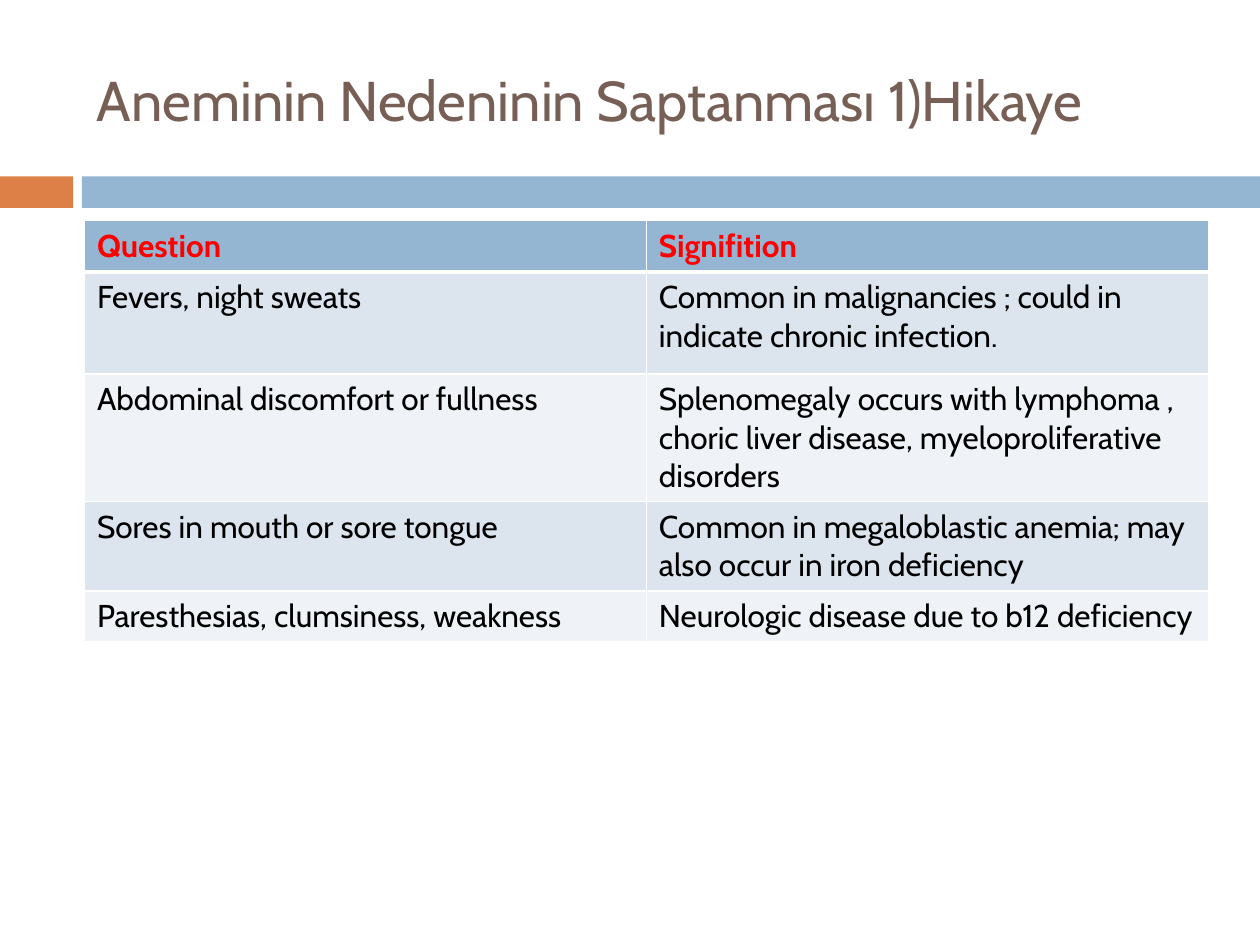
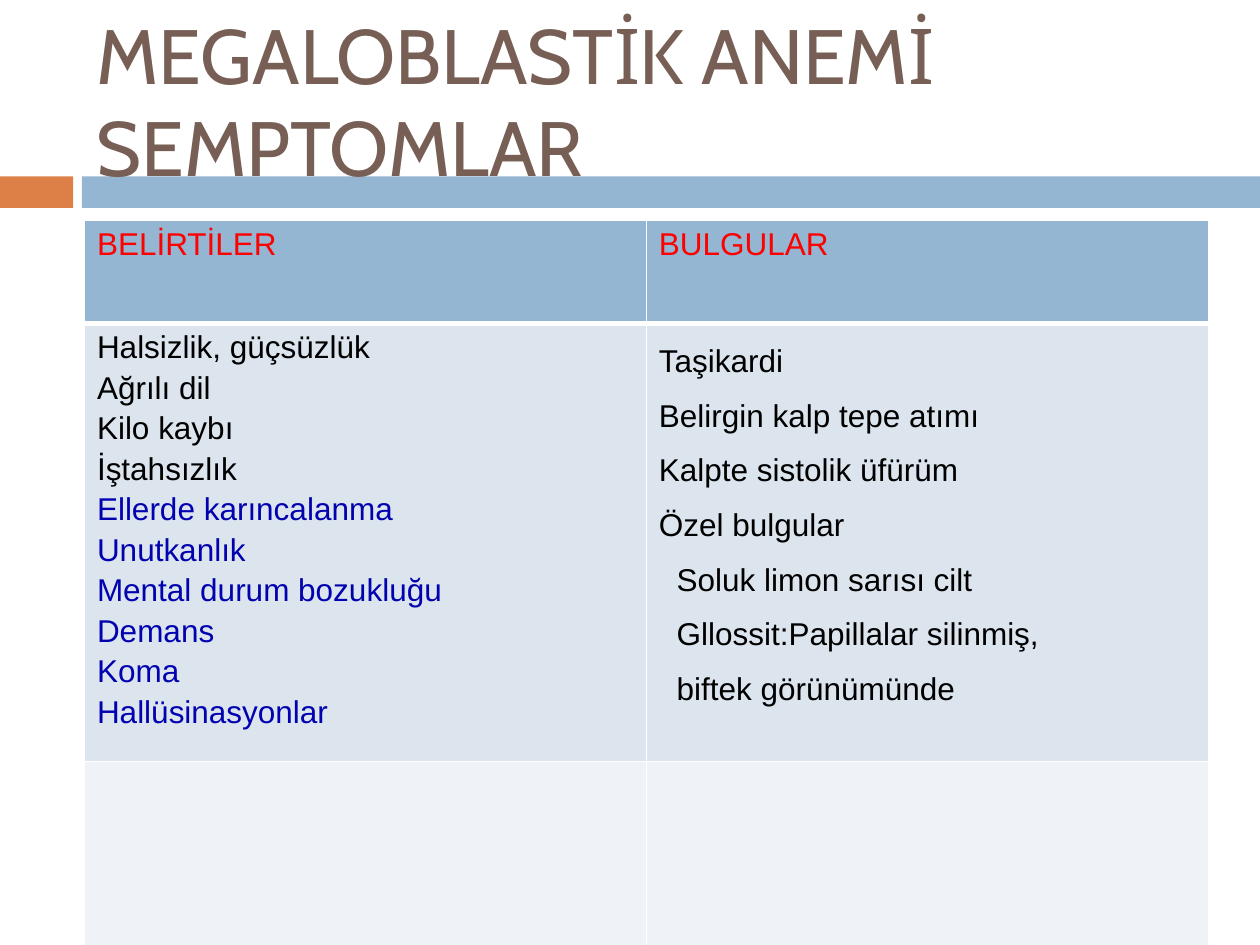
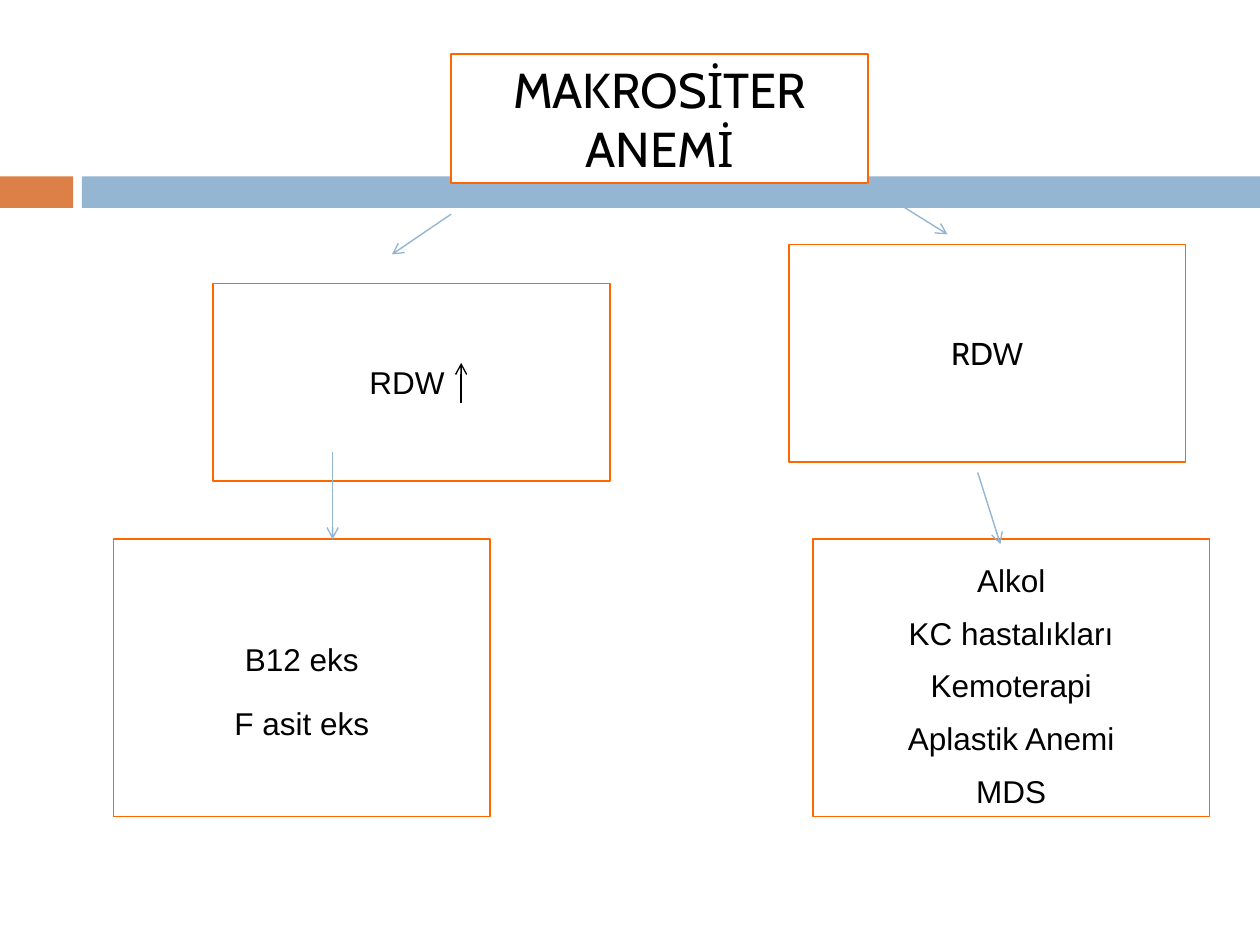
"""Build three slides on anaemia: two tables and a decision chart."""
import dataclasses

import pptx
import pptx.dml.color
import pptx.enum.shapes
import pptx.enum.text
import pptx.oxml
import pptx.oxml.ns
import pptx.util

COLS, ROWS = 100, 75
UNIT = pptx.util.Inches(0.1)
NS = pptx.oxml.ns.nsdecls("a")
ALIGN = pptx.enum.text.PP_ALIGN
MIDDLE = pptx.enum.text.MSO_ANCHOR.MIDDLE
RECT = pptx.enum.shapes.MSO_SHAPE.RECTANGLE
STRAIGHT = pptx.enum.shapes.MSO_CONNECTOR.STRAIGHT


@dataclasses.dataclass(frozen=True)
class Theme:
    """Colours, fonts and type sizes of the deck."""
    white: str = "FFFFFF"
    ink: str = "000000"
    brown: str = "775F55"
    blue: str = "94B6D2"
    rust: str = "DD8047"
    red: str = "FF0000"
    navy: str = "0101AF"
    edge: str = "FF6600"
    bands: tuple = ("DCE5EE", "EFF3F7")
    main: str = "Cabin"
    plain: str = "Arial"
    body: int = 18
    node: int = 28
    head: int = 32
    large: int = 44
    thin: float = 0.79
    rule: int = 1
    thick: int = 3


LOOK = Theme()


@dataclasses.dataclass(frozen=True)
class Box:
    """An area measured in grid columns and rows."""
    x: float
    y: float
    w: float
    h: float

    def sub(self, x, y, w, h):
        """Give a box placed relative to this one."""
        return Box(self.x + x, self.y + y, w, h)

    def spot(self, x, y):
        """Give the slide position of a point in this box."""
        return round((self.x + x) * UNIT), round((self.y + y) * UNIT)

    def area(self):
        """Give left, top, width and height in slide units."""
        return tuple(round(n * UNIT) for n in (self.x, self.y, self.w, self.h))


PAGE = Box(0, 0, COLS, ROWS)
TITLE = PAGE.sub(6.7, 2.5, 89.2, 10.8)
BODY = PAGE.sub(6.7, 17.5, 89.2, 57.5)


def rgb(code):
    """Turn a hex code into a colour."""
    return pptx.dml.color.RGBColor.from_string(code)


def write(frame, lines, size=LOOK.body, font=LOOK.main, color=LOOK.ink,
          bold=False, align=ALIGN.LEFT, lead=None, gap=None, inset=0):
    """Write lines of text; a line may be a pair of text and own format."""
    frame.word_wrap = True
    for i, line in enumerate(lines):
        text, own = line if isinstance(line, tuple) else (line, {})
        para = frame.paragraphs[0] if i == 0 else frame.add_paragraph()
        para.alignment = align
        para.line_spacing = lead
        if gap is not None:
            para.space_before = pptx.util.Pt(gap)
        indent = own.get("inset", inset)
        if indent:
            para._p.get_or_add_pPr().set("marL", str(round(indent * UNIT)))
        run = para.add_run()
        run.text = text
        run.font.name = font
        run.font.size = pptx.util.Pt(size)
        run.font.bold = bold
        run.font.color.rgb = rgb(own.get("color", color))


def block(slide, box, fill, edge=None):
    """Draw a flat rectangle."""
    shape = slide.shapes.add_shape(RECT, *box.area())
    shape.shadow.inherit = False
    shape.fill.solid()
    shape.fill.fore_color.rgb = rgb(fill)
    if edge:
        shape.line.color.rgb = rgb(edge)
        shape.line.width = pptx.util.Pt(LOOK.rule)
    else:
        shape.line.fill.background()
    return shape


def bands(slide, box):
    """Draw the rust and blue bands across the slide."""
    block(slide, box.sub(0, 14, 5.8, 2.5), LOOK.rust)
    block(slide, box.sub(6.5, 14, box.w - 6.5, 2.5), LOOK.blue)


def title(slide, box, text, size):
    """Write the slide title."""
    frame = slide.shapes.add_textbox(*box.area()).text_frame
    frame.vertical_anchor = MIDDLE
    write(frame, [text], size=size, color=LOOK.brown)


def border(cell, **widths):
    """Draw white cell borders, given in points by side."""
    props = cell._tc.get_or_add_tcPr()
    for i, side in enumerate("LRTB"):
        width = pptx.util.Pt(widths.get(side, LOOK.rule))
        props.insert(i, pptx.oxml.parse_xml(
            f'<a:ln{side} {NS} w="{width}"><a:solidFill>'
            f'<a:srgbClr val="{LOOK.white}"/></a:solidFill></a:ln{side}>'))


def grid(slide, box, rows, sizes, head, body):
    """Draw a banded table; head and body hold one format per column."""
    count = len(rows[0])
    area = Box(box.x, box.y, box.w, sum(sizes)).area()
    table = slide.shapes.add_table(len(rows), count, *area).table
    table.first_row = table.horz_banding = False
    for col in table.columns:
        col.width = round(box.w / count * UNIT)
    for r, (row, size) in enumerate(zip(rows, sizes)):
        table.rows[r].height = round(size * UNIT)
        for c, lines in enumerate(row):
            cell = table.cell(r, c)
            cell.fill.solid()
            cell.fill.fore_color.rgb = rgb(
                LOOK.bands[(r - 1) % 2] if r else LOOK.blue)
            border(cell, **({0: {"B": LOOK.thick}, 1: {"T": LOOK.thick}}.get(r, {})))
            write(cell.text_frame, lines, **(body if r else head)[c])


def arrow(slide, box, start, end, color=LOOK.blue):
    """Draw a thin arrow between two points of a box."""
    line = slide.shapes.add_connector(STRAIGHT, *box.spot(*start), *box.spot(*end))
    line.line.color.rgb = rgb(color)
    line.line.width = pptx.util.Pt(LOOK.thin)
    line.line._get_or_add_ln().append(
        pptx.oxml.parse_xml(f'<a:tailEnd {NS} type="arrow"/>'))
    line._element.spPr.append(pptx.oxml.parse_xml(f"<a:effectLst {NS}/>"))


def node(slide, box, lines, **style):
    """Draw a framed box with centred text."""
    frame = block(slide, box, LOOK.white, LOOK.edge).text_frame
    frame.vertical_anchor = MIDDLE
    write(frame, lines, align=ALIGN.CENTER, **style)


def history(slide, box):
    """Fill the table of history questions."""
    rows = [
        ("Question", "Signifition"),
        ("Fevers, night sweats",
         "Common in malignancies ; could in indicate chronic infection."),
        ("Abdominal discomfort or fullness",
         "Splenomegaly occurs with lymphoma , choric liver disease, "
         "myeloproliferative disorders"),
        ("Sores in mouth or sore tongue",
         "Common in megaloblastic anemia; may also occur in iron deficiency"),
        ("Paresthesias, clumsiness, weakness",
         "Neurologic disease due to b12 deficiency"),
    ]
    cells = [[[text] for text in row] for row in rows]
    head = {"color": LOOK.red, "bold": True}
    grid(slide, box, cells, (4.1, 8.1, 10.1, 7.1, 4), [head] * 2, [{}] * 2)


def signs(slide, box):
    """Fill the table of symptoms and findings."""
    nerve = ("Ellerde karıncalanma", "Unutkanlık", "Mental durum bozukluğu",
             "Demans", "Koma", "Hallüsinasyonlar")
    special = ("Soluk limon sarısı cilt", "Gllossit:Papillalar silinmiş,",
               "biftek görünümünde")
    left = ["Halsizlik, güçsüzlük", "Ağrılı dil", "Kilo kaybı", "İştahsızlık"]
    left += [(text, {"color": LOOK.navy}) for text in nerve]
    right = ["Taşikardi", "Belirgin kalp tepe atımı",
             "Kalpte sistolik üfürüm", "Özel bulgular"]
    right += [(text, {"inset": 1.4}) for text in special]
    base = {"font": LOOK.plain, "gap": 3}
    grid(slide, box, [(["BELİRTİLER"], ["BULGULAR"]), (left, right), ([], [])],
         (8.2, 34.1, 31), [base | {"color": LOOK.red}] * 2,
         [base, base | {"lead": 1.4}])


def flow(slide, box):
    """Draw the decision chart of macrocytic anaemia."""
    plain = {"font": LOOK.plain}
    node(slide, box.sub(35.8, 4.3, 33.1, 10.2), ["MAKROSİTER ANEMİ"],
         size=LOOK.node)
    node(slide, box.sub(16.9, 22.5, 31.5, 15.7), ["RDW "], **plain)
    node(slide, box.sub(62.6, 19.4, 31.5, 17.3), ["RDW"])
    node(slide, box.sub(9, 42.8, 29.9, 22), ["B12 eks", "F asit eks"],
         lead=1.7, **plain)
    node(slide, box.sub(64.5, 42.8, 31.5, 22),
         ["Alkol", "KC hastalıkları", "Kemoterapi", "Aplastik Anemi", "MDS"],
         lead=1.4, **plain)
    for start, end in (((35.8, 17), (31.1, 20.2)), ((68.8, 14.6), (75.2, 18.6)),
                       ((26.4, 35.9), (26.4, 42.8)), ((77.6, 37.5), (79.4, 43.2))):
        arrow(slide, box, start, end)
    arrow(slide, box, (36.6, 32), (36.6, 28.8), LOOK.ink)


def main():
    """Build and save the deck."""
    deck = pptx.Presentation()
    deck.slide_width, deck.slide_height = COLS * UNIT, ROWS * UNIT
    plan = (
        ("Aneminin Nedeninin Saptanması 1)Hikaye", LOOK.head, history, BODY),
        ("MEGALOBLASTİK ANEMİ SEMPTOMLAR", LOOK.large, signs, BODY),
        (None, None, flow, PAGE),
    )
    for text, size, fill, box in plan:
        slide = deck.slides.add_slide(deck.slide_layouts[6])
        bands(slide, PAGE)
        if text:
            title(slide, TITLE, text, size)
        fill(slide, box)
    deck.save("out.pptx")


if __name__ == "__main__":
    main()
